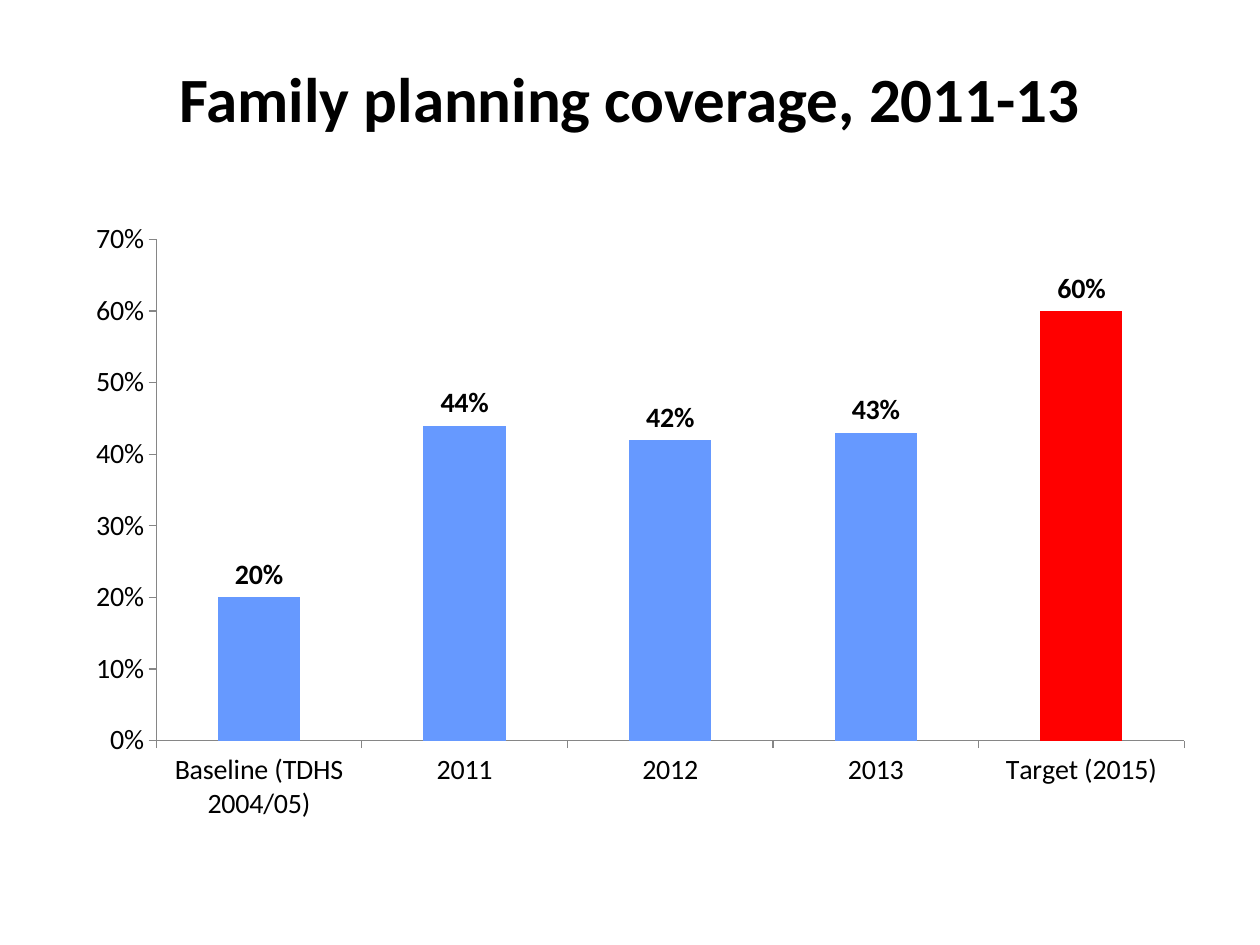
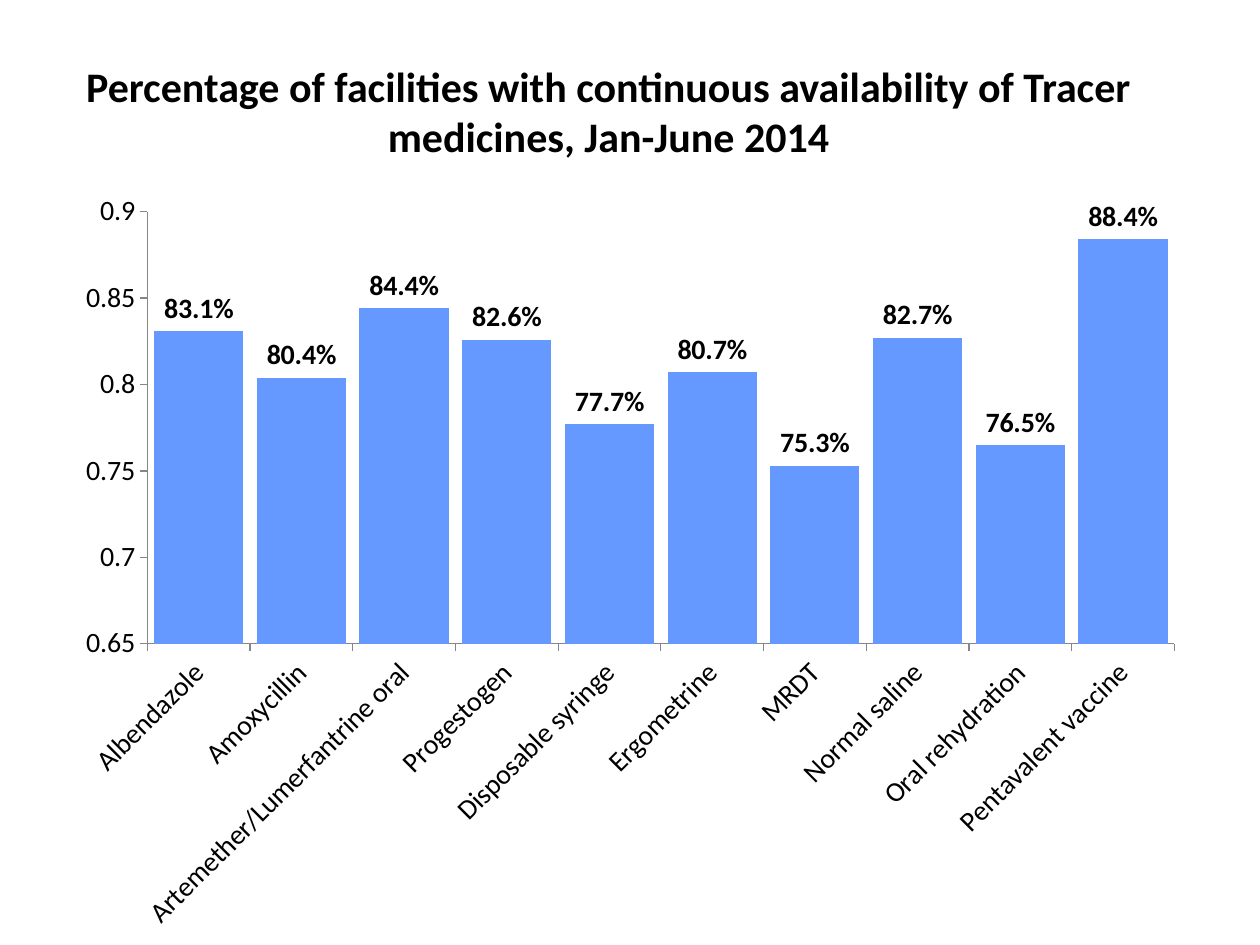
from dataclasses import dataclass

import lxml.etree
import pptx
import pptx.chart.data
import pptx.dml.color
import pptx.enum.chart
import pptx.enum.text
import pptx.oxml.ns
import pptx.util

Inches = pptx.util.Inches
Pt = pptx.util.Pt
qn = pptx.oxml.ns.qn


@dataclass(frozen=True)
class Theme:
    font: str = "Calibri"
    text: str = "000000"
    bar: str = "6699FF"
    target_bar: str = "FF0000"
    axis: str = "868686"
    large_title: int = 36
    small_title: int = 24
    chart_text: int = 16


THEME = Theme()
TITLE_ONLY_LAYOUT = 5

COVERAGE = {
    "Baseline (TDHS 2004/05)": 0.2,
    "2011": 0.44,
    "2012": 0.42,
    "2013": 0.43,
    "Target (2015)": 0.6,
}
AVAILABILITY = {
    "Albendazole": 0.831,
    "Amoxycillin": 0.804,
    "Artemether/Lumerfantrine oral": 0.844,
    "Progestogen": 0.826,
    "Disposable syringe": 0.777,
    "Ergometrine": 0.807,
    "MRDT": 0.753,
    "Normal saline": 0.827,
    "Oral rehydration": 0.765,
    "Pentavalent vaccine": 0.884,
}


def rgb(color):
    return pptx.dml.color.RGBColor.from_string(color)


def style_font(font, size, bold=False):
    font.name = THEME.font
    font.size = Pt(size)
    font.bold = bold
    font.color.rgb = rgb(THEME.text)


def fill_solid(fill, color):
    fill.solid()
    fill.fore_color.rgb = rgb(color)


def add_titled_slide(deck, text, area, size):
    slide = deck.slides.add_slide(deck.slide_layouts[TITLE_ONLY_LAYOUT])
    title = slide.shapes.title
    title.left, title.top, title.width, title.height = map(Inches, area)
    frame = title.text_frame
    frame.text = text
    frame.word_wrap = True
    frame.auto_size = pptx.enum.text.MSO_AUTO_SIZE.NONE
    frame.vertical_anchor = pptx.enum.text.MSO_ANCHOR.MIDDLE
    para = frame.paragraphs[0]
    para.alignment = pptx.enum.text.PP_ALIGN.CENTER
    style_font(para.font, size, bold=True)
    return slide


def style_axis(axis, number_format=None):
    axis.has_major_gridlines = False
    axis.major_tick_mark = pptx.enum.chart.XL_TICK_MARK.OUTSIDE
    axis.minor_tick_mark = pptx.enum.chart.XL_TICK_MARK.NONE
    axis.format.line.color.rgb = rgb(THEME.axis)
    axis.format.line.width = Pt(0.75)
    style_font(axis.tick_labels.font, THEME.chart_text)
    if number_format:
        axis.tick_labels.number_format = number_format
        axis.tick_labels.number_format_is_linked = False


def scale_axis(axis, minimum, maximum, step):
    axis.minimum_scale = minimum
    axis.maximum_scale = maximum
    axis.major_unit = step


def place_plot(chart, chart_area, plot_area):
    """Fix the inner plot; both areas are slide inches."""
    chart_left, chart_top, chart_width, chart_height = chart_area
    left, top, width, height = plot_area
    settings = {
        "layoutTarget": "inner",
        "xMode": "edge",
        "yMode": "edge",
        "x": (left - chart_left) / chart_width,
        "y": (top - chart_top) / chart_height,
        "w": width / chart_width,
        "h": height / chart_height,
    }
    plot_element = chart._chartSpace.find(".//" + qn("c:plotArea"))
    layout = plot_element.find(qn("c:layout"))
    if layout is not None:
        plot_element.remove(layout)
    layout = lxml.etree.Element(qn("c:layout"))
    plot_element.insert(0, layout)
    manual = lxml.etree.SubElement(layout, qn("c:manualLayout"))
    for tag, value in settings.items():
        lxml.etree.SubElement(manual, qn("c:" + tag)).set("val", str(value))


def rotate_category_labels(chart, degrees):
    body = chart._chartSpace.find(
        ".//" + qn("c:catAx") + "/" + qn("c:txPr") + "/" + qn("a:bodyPr"))
    body.set("rot", str(degrees * 60000))
    body.set("vert", "horz")


def add_column_chart(slide, values, chart_area, plot_area, gap,
                     label_format, axis_format):
    data = pptx.chart.data.CategoryChartData()
    data.categories = list(values)
    data.add_series("Series 1", list(values.values()))
    chart = slide.shapes.add_chart(
        pptx.enum.chart.XL_CHART_TYPE.COLUMN_CLUSTERED,
        *map(Inches, chart_area), data).chart
    chart.has_title = False
    chart.has_legend = False
    style_font(chart.font, THEME.chart_text)
    style_axis(chart.category_axis)
    style_axis(chart.value_axis, axis_format)
    place_plot(chart, chart_area, plot_area)

    plot = chart.plots[0]
    plot.gap_width = gap
    plot.vary_by_categories = False
    series = plot.series[0]
    series.invert_if_negative = False
    fill_solid(series.format.fill, THEME.bar)

    labels = series.data_labels
    labels.show_value = True
    labels.number_format = label_format
    labels.number_format_is_linked = False
    labels.position = pptx.enum.chart.XL_LABEL_POSITION.OUTSIDE_END
    style_font(labels.font, THEME.chart_text, bold=True)
    return chart


def add_coverage_slide(deck):
    slide = add_titled_slide(deck, "Family planning coverage, 2011-13",
                             (0.5, 0.3, 9, 0.95), THEME.large_title)
    chart = add_column_chart(slide, COVERAGE,
                             chart_area=(0.58, 1.67, 9, 4.95),
                             plot_area=(1.24, 1.9, 8.16, 3.98),
                             gap=150, label_format="0%", axis_format="0%")
    scale_axis(chart.value_axis, 0, 0.7, 0.1)
    target = chart.plots[0].series[0].points[len(COVERAGE) - 1]
    fill_solid(target.format.fill, THEME.target_bar)


def add_availability_slide(deck):
    slide = add_titled_slide(
        deck,
        "Percentage of facilities with continuous availability of Tracer "
        "medicines, Jan-June 2014",
        (0.33, 0.5, 9, 0.76), THEME.small_title)
    chart = add_column_chart(slide, AVAILABILITY,
                             chart_area=(0.5, 1.42, 9, 6.08),
                             plot_area=(1.17, 1.68, 8.15, 3.43),
                             gap=15, label_format="0.0%",
                             axis_format="General")
    scale_axis(chart.value_axis, 0.65, 0.9, 0.05)
    rotate_category_labels(chart, -45)


def main():
    deck = pptx.Presentation()
    deck.slide_width = Inches(10)
    deck.slide_height = Inches(7.5)
    add_coverage_slide(deck)
    add_availability_slide(deck)
    deck.save("out.pptx")


if __name__ == "__main__":
    main()
